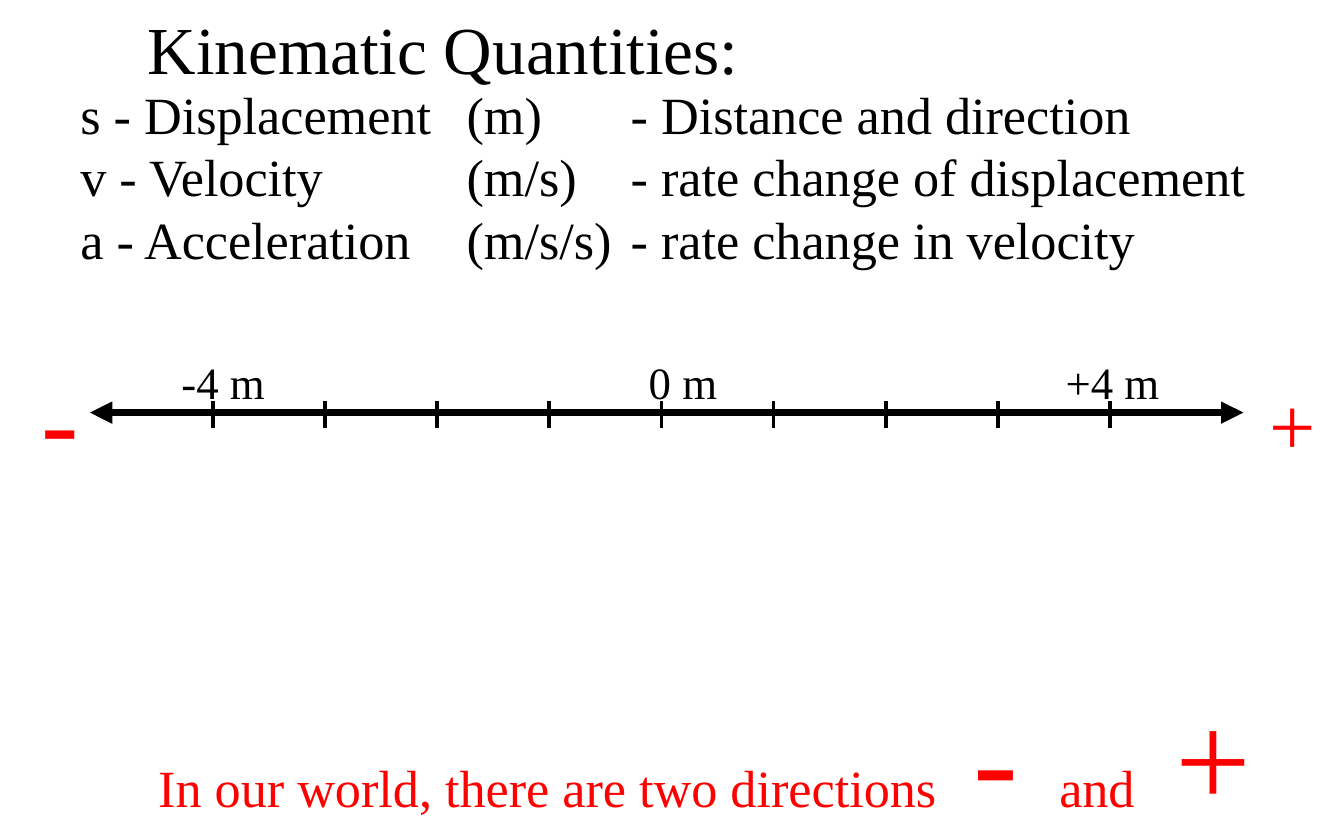
from lxml import etree
from pptx import Presentation
from pptx.dml.color import RGBColor
from pptx.enum.shapes import MSO_CONNECTOR
from pptx.enum.text import MSO_ANCHOR, MSO_AUTO_SIZE, PP_ALIGN
from pptx.oxml.ns import qn
from pptx.util import Cm, Pt

STRAIGHT = MSO_CONNECTOR.STRAIGHT
TOP = MSO_ANCHOR.TOP
NO_RESIZE = MSO_AUTO_SIZE.NONE
LEFT = PP_ALIGN.LEFT

BLACK = RGBColor(0x00, 0x00, 0x00)
RED = RGBColor(0xFF, 0x00, 0x00)
FONT = "Times New Roman"

QUANTITIES = [
    ("s - Displacement", "(m)", "- Distance and direction"),
    ("v - Velocity", "(m/s)", "- rate change of displacement"),
    ("a - Acceleration", "(m/s/s)", "- rate change in velocity"),
]
QUANTITY_TABS = (7.3, 10.4)
SENTENCE = [
    ("In our world, there are two directions\t", 28),
    ("-", 72),
    ("\tand\t", 28),
    ("+", 72),
]
SENTENCE_TABS = (15.4, 17.03, 19.23)

AXIS_Y = 7.8
AXIS_START, AXIS_END = 1.7, 23.5
ORIGIN_X = 12.5
METRE = 2.12
TICK_TOP, TICK_BOTTOM = 7.59, 8.1
MARKS = [
    ("-4 m", 3.18, 6.58, 2.11, 24, BLACK),
    ("0 m", 12.01, 6.58, 1.83, 24, BLACK),
    ("+4 m", 19.89, 6.58, 2.29, 24, BLACK),
    ("-", 0.53, 6.48, 1.22, 60, RED),
    ("+", 23.75, 6.93, 1.4, 44, RED),
]


def apply_format(target, values):
    for name, value in values.items():
        setattr(target, name, value)


def add_span(para, text, size, color):
    span = para.add_run()
    span.text = text
    apply_format(span.font, {"name": FONT, "size": Pt(size)})
    span.font.color.rgb = color


def set_tabs(para, positions):
    """Give the paragraph left tab stops, in centimetres from the text edge."""
    tabs = etree.SubElement(para._p.get_or_add_pPr(), qn("a:tabLst"))
    for position in positions:
        etree.SubElement(tabs, qn("a:tab"), pos=str(Cm(position)), algn="l")


def format_frame(frame, wrap):
    apply_format(frame, {
        "word_wrap": wrap, "auto_size": NO_RESIZE, "vertical_anchor": TOP,
        "margin_left": Cm(0.25), "margin_right": Cm(0.25),
        "margin_top": Cm(0.13), "margin_bottom": Cm(0.13),
    })


def add_box(page, left, top, width, height, wrap=True):
    box = page.shapes.add_textbox(Cm(left), Cm(top), Cm(width), Cm(height))
    format_frame(box.text_frame, wrap)
    return box.text_frame


def add_title(page, text):
    title = page.shapes.title
    apply_format(title, {"left": Cm(2.54), "top": Cm(0),
                         "width": Cm(19.94), "height": Cm(1.8)})
    format_frame(title.text_frame, True)
    para = title.text_frame.paragraphs[0]
    para.alignment = LEFT
    add_span(para, text, 36, BLACK)


def add_quantities(page):
    frame = add_box(page, 1.27, 1.42, 24.13, 3.84)
    for index, columns in enumerate(QUANTITIES):
        para = frame.add_paragraph() if index else frame.paragraphs[0]
        set_tabs(para, QUANTITY_TABS)
        add_span(para, "\t".join(columns), 28, BLACK)


def add_line(page, start, end, width):
    line = page.shapes.add_connector(STRAIGHT, *map(Cm, start + end))
    line.line.color.rgb = BLACK
    line.line.width = Pt(width)
    etree.SubElement(line._element.spPr, qn("a:effectLst"))
    return line


def add_number_line(page):
    axis = add_line(page, (AXIS_START, AXIS_Y), (AXIS_END, AXIS_Y), 4)
    outline = axis.line._get_or_add_ln()
    for end in ("a:headEnd", "a:tailEnd"):
        etree.SubElement(outline, qn(end), type="triangle")
    for metre in range(-4, 5):
        x = ORIGIN_X + metre * METRE
        add_line(page, (x, TICK_TOP), (x, TICK_BOTTOM), 2)
    for text, left, top, width, size, color in MARKS:
        frame = add_box(page, left, top, width, size / 20, wrap=False)
        add_span(frame.paragraphs[0], text, size, color)


def add_sentence(page):
    para = add_box(page, 2.74, 12.6, 21.6, 3.2).paragraphs[0]
    set_tabs(para, SENTENCE_TABS)
    for text, size in SENTENCE:
        add_span(para, text, size, RED)


def main():
    deck = Presentation()
    apply_format(deck, {"slide_width": Cm(25.4), "slide_height": Cm(15.88)})
    page = deck.slides.add_slide(deck.slide_layouts[5])
    add_title(page, "Kinematic Quantities:")
    add_quantities(page)
    add_number_line(page)
    add_sentence(page)
    deck.save("out.pptx")


if __name__ == "__main__":
    main()
